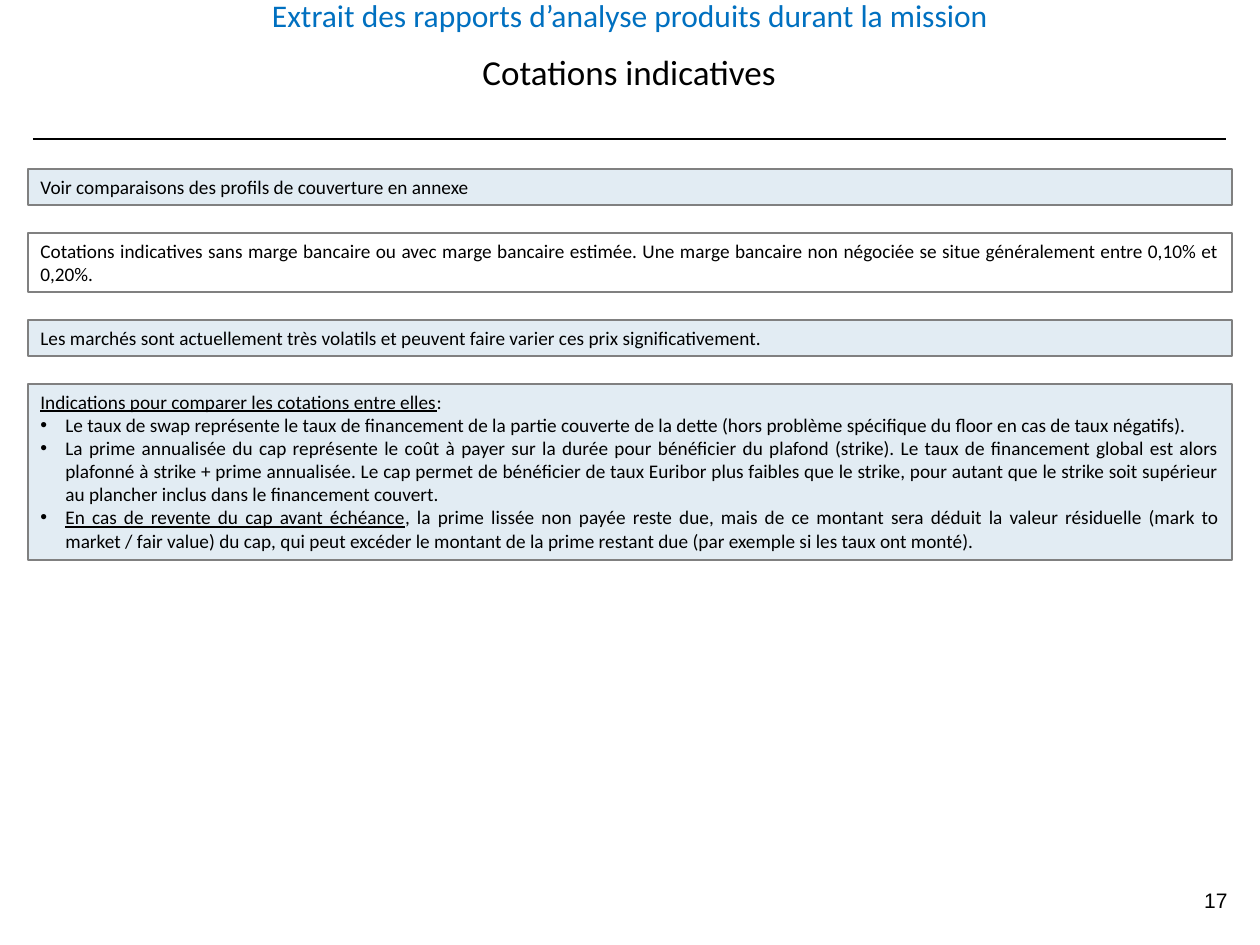
from lxml import etree
from pptx import Presentation, util as u
from pptx.dml.color import RGBColor
from pptx.enum import shapes, text
from pptx.oxml import ns

ALIGN = text.PP_ALIGN
PX = 914400 / 126
BULLET_INDENT = 25


def px(*lengths):
    return [u.Emu(round(length * PX)) for length in lengths]


def color(hex_string):
    return RGBColor.from_string(hex_string)


def add_bullet(paragraph, indent):
    """Hang the paragraph behind a round bullet."""
    properties = paragraph._p.get_or_add_pPr()
    width = px(indent)[0]
    properties.set("marL", str(width))
    properties.set("indent", str(-width))
    etree.SubElement(properties, ns.qn("a:buFont")).set("typeface", "Arial")
    etree.SubElement(properties, ns.qn("a:buChar")).set("char", "•")


def write(frame, paragraphs, size=11, font="Calibri", ink="000000",
          align=ALIGN.JUSTIFY, anchor=text.MSO_ANCHOR.TOP):
    """Each paragraph is (underlined part, plain part, has a bullet)."""
    frame.word_wrap = True
    frame.auto_size = text.MSO_AUTO_SIZE.NONE
    frame.vertical_anchor = anchor
    for index, (underlined, plain, bullet) in enumerate(paragraphs):
        paragraph = frame.paragraphs[0] if index == 0 else frame.add_paragraph()
        paragraph.alignment = align
        paragraph.space_before = u.Pt(0)
        if bullet:
            add_bullet(paragraph, BULLET_INDENT)
        for words, underline in ((underlined, True), (plain, False)):
            if words:
                run = paragraph.add_run()
                run.text = words
                run.font.name = font
                run.font.size = u.Pt(size)
                run.font.underline = underline
                run.font.color.rgb = color(ink)


class ReportSlide:
    tint = "E2ECF3"
    border = "808080"
    ink = "000000"
    line_width = u.Pt(0.75)

    def __init__(self, presentation):
        self.slide = presentation.slides.add_slide(presentation.slide_layouts[5])

    def title(self, words, left, top, width, height, **style):
        title = self.slide.shapes.title
        title.left, title.top, title.width, title.height = px(left, top, width, height)
        write(title.text_frame, [("", words, False)], **style)

    def label(self, words, left, top, width, height, **style):
        label = self.slide.shapes.add_textbox(*px(left, top, width, height))
        write(label.text_frame, [("", words, False)], **style)

    def rule(self, left, right, y):
        rule = self.slide.shapes.add_connector(
            shapes.MSO_CONNECTOR.STRAIGHT, *px(left, y, right, y))
        rule.line.color.rgb = color(self.ink)
        rule.line.width = self.line_width
        etree.SubElement(rule._element.spPr, ns.qn("a:effectLst"))

    def panel(self, paragraphs, left, top, width, height, tinted):
        panel = self.slide.shapes.add_shape(
            shapes.MSO_SHAPE.RECTANGLE, *px(left, top, width, height))
        panel.shadow.inherit = False
        if tinted:
            panel.fill.solid()
            panel.fill.fore_color.rgb = color(self.tint)
        else:
            panel.fill.background()
        panel.line.color.rgb = color(self.border)
        panel.line.width = self.line_width
        write(panel.text_frame, paragraphs)


# (height, tinted, paragraphs), from top to bottom
PANELS = [
    (36, True, [("", "Voir comparaisons des profils de couverture en annexe", False)]),
    (59, False, [("", "Cotations indicatives sans marge bancaire ou avec marge bancaire "
                  "estimée. Une marge bancaire non négociée se situe généralement "
                  "entre 0,10% et 0,20%.", False)]),
    (36, True, [("", "Les marchés sont actuellement très volatils et peuvent faire "
                 "varier ces prix significativement.", False)]),
    (176, True, [
        ("Indications pour comparer les cotations entre elles", ":", False),
        ("", "Le taux de swap représente le taux de financement de la partie couverte "
         "de la dette (hors problème spécifique du floor en cas de taux négatifs).", True),
        ("", "La prime annualisée du cap représente le coût à payer sur la durée pour "
         "bénéficier du plafond (strike). Le taux de financement global est alors "
         "plafonné à strike + prime annualisée. Le cap permet de bénéficier de taux "
         "Euribor plus faibles que le strike, pour autant que le strike soit supérieur "
         "au plancher inclus dans le financement couvert.", True),
        ("En cas de revente du cap avant échéance",
         ", la prime lissée non payée reste due, mais de ce montant sera déduit la "
         "valeur résiduelle (mark to market / fair value) du cap, qui peut excéder le "
         "montant de la prime restant due (par exemple si les taux ont monté).", True),
    ]),
]
PANEL_GAP = 28


def main():
    presentation = Presentation()
    presentation.slide_width, presentation.slide_height = px(1260, 945)
    report = ReportSlide(presentation)

    report.rule(33, 1226, 139)
    report.label("17", 946, 881, 294, 45, size=12, font="Arial", align=ALIGN.RIGHT)
    top = 169
    for height, tinted, paragraphs in PANELS:
        report.panel(paragraphs, 28, top, 1204, height, tinted)
        top += height + PANEL_GAP
    report.title("Cotations indicatives", 214, 44, 830, 55, size=20, align=ALIGN.CENTER)
    report.label("Extrait des rapports d’analyse produits durant la mission",
                 237, -10, 786, 50, size=18, ink="0070C0", align=ALIGN.CENTER)

    presentation.save("out.pptx")


if __name__ == "__main__":
    main()
